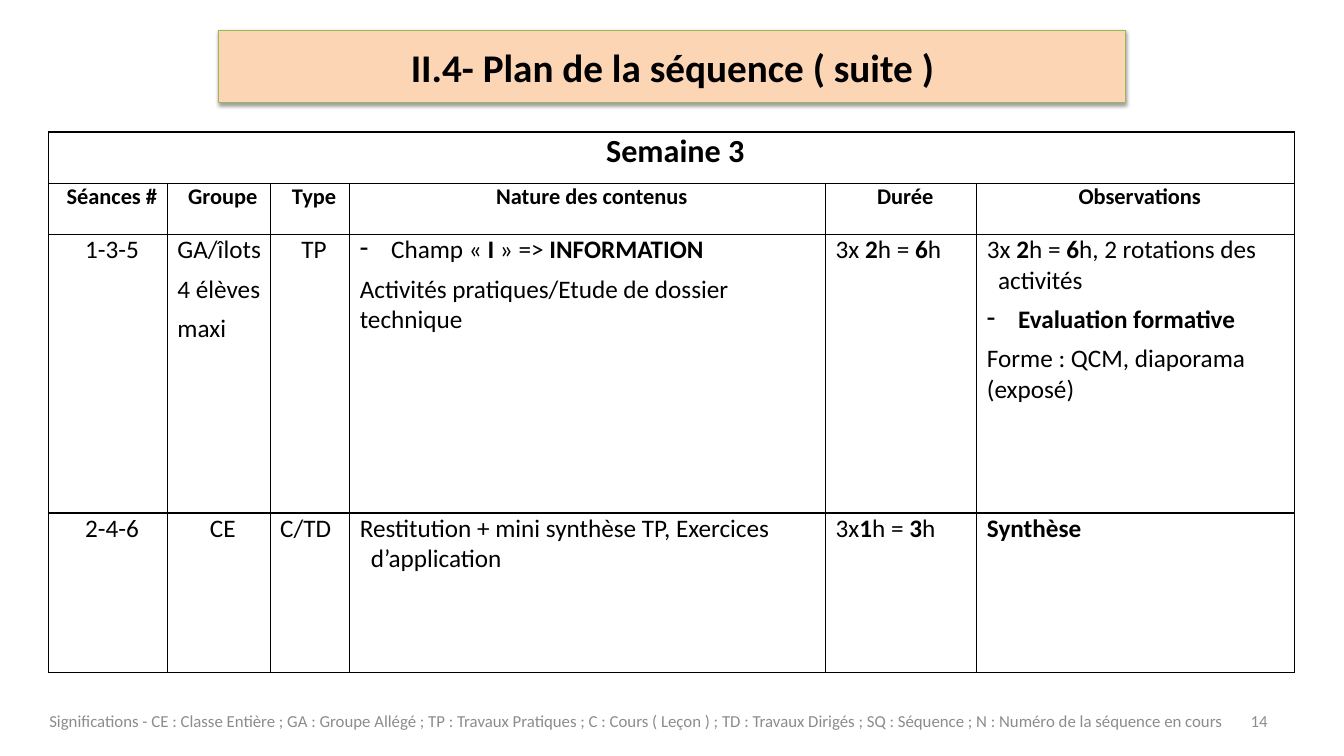
import pptx
import pptx.util
import pptx.dml.color
import pptx.enum.text
import pptx.oxml
import pptx.oxml.ns

TITLE = "II.4- Plan de la séquence ( suite )"
WEEK = "Semaine 3"
HEADS = ["Séances #", "Groupe", "Type", "Nature des contenus", "Durée", "Observations"]
BODY = [
    [
        [("mid", "1-3-5")],
        [("left", "GA/îlots"), ("left", "4 élèves"), ("left", "maxi")],
        [("mid", "TP")],
        [("dash", "Champ «\u00a0*I*\u00a0» => *INFORMATION*"),
         ("flat", "Activités pratiques/Etude de dossier technique")],
        [("left", "3x *2*h = *6*h")],
        [("left", "3x *2*h = *6*h, 2 rotations des activités"),
         ("dash", "*Evaluation formative*"),
         ("flat", "Forme : QCM, diaporama (exposé)")],
    ],
    [
        [("mid", "2-4-6")],
        [("mid", "CE")],
        [("left", "C/TD")],
        [("left", "Restitution + mini synthèse TP, Exercices d’application")],
        [("left", "3x*1*h = *3*h")],
        [("left", "*Synthèse*")],
    ],
]
NOTE = ("Significations - CE : Classe Entière ; GA : Groupe Allégé ; TP : Travaux Pratiques ; "
        "C : Cours ( Leçon ) ; TD : Travaux Dirigés ; SQ : Séquence ; "
        "N : Numéro de la séquence en cours")
PAGE = "14"

HUES = {"ink": "000000", "peach": "FCD5B5", "green": "98B955", "grey": "8C8C8C"}
FONT = "Calibri"
WIDE, HIGH = 13.33, 7.5
COLS = [1.18, 1.02, 0.79, 4.72, 1.5, 3.15]
ROWS = [0.51, 0.51, 2.76, 1.58]
AREAS = {
    "title": (16.28, 4, 67.5, 9.6),
    "table": (3.6, 17.47, 92.72, 71.4),
    "note": (2.78, 92.67, 89.2, 5.33),
    "page": (71.72, 92.67, 23.33, 5.33),
}
ALIGN = pptx.enum.text.PP_ALIGN
FORMS = {
    "mid": (ALIGN.CENTER, 0.19, -0.11, False),
    "left": (ALIGN.LEFT, 0.19, -0.11, False),
    "dash": (ALIGN.LEFT, 0.39, -0.31, True),
    "flat": (ALIGN.LEFT, 0.08, 0, False),
}
INCH, PT = pptx.util.Inches, pptx.util.Pt
NS = pptx.oxml.ns.nsdecls("a")


def tint(key):
    return pptx.dml.color.RGBColor.from_string(HUES[key])


def place(name):
    x, y, w, h = AREAS[name]
    return [INCH(share * side / 100) for share, side in ((x, WIDE), (y, HIGH), (w, WIDE), (h, HIGH))]


def write(par, text, size=18, bold=False, hue="ink", align=ALIGN.CENTER, form=None):
    par.alignment = align
    if form:
        par.alignment, left, hang, dash = FORMS[form]
        par.space_before = PT(6)
        props = par._p.get_or_add_pPr()
        props.set("marL", str(INCH(left)))
        props.set("indent", str(INCH(hang)))
        tag = f'<a:buChar {NS} char="-"/>' if dash else f"<a:buNone {NS}/>"
        props.append(pptx.oxml.parse_xml(tag))
    for n, part in enumerate(text.split("*")):
        if part:
            run = par.add_run()
            run.text = part
            run.font.name, run.font.size = FONT, PT(size)
            run.font.bold = bold or n % 2 == 1
            run.font.color.rgb = tint(hue)


def fill(cell, pars, size=18, bold=False):
    cell.margin_left = cell.margin_right = INCH(0.02)
    cell.margin_top = cell.margin_bottom = 0
    cell.fill.background()
    props = cell._tc.get_or_add_tcPr()
    for n, side in enumerate("LRTB"):
        props.insert(n, pptx.oxml.parse_xml(
            f'<a:ln{side} {NS} w="{PT(1)}"><a:solidFill><a:srgbClr val="{HUES["ink"]}"/>'
            f"</a:solidFill></a:ln{side}>"))
    frame = cell.text_frame
    for n, (form, text) in enumerate(pars):
        par = frame.add_paragraph() if n else frame.paragraphs[0]
        write(par, text, size=size, bold=bold, form=form)


def head(slide):
    box = slide.shapes.title
    box.left, box.top, box.width, box.height = place("title")
    box.fill.solid()
    box.fill.fore_color.rgb = tint("peach")
    box.line.color.rgb = tint("green")
    box.line.width = PT(0.75)
    box._element.spPr.append(pptx.oxml.parse_xml(
        f'<a:effectLst {NS}><a:outerShdw blurRad="{PT(3.1)}" dist="{PT(1.6)}" dir="5400000" '
        f'rotWithShape="0"><a:srgbClr val="{HUES["ink"]}"><a:alpha val="38000"/></a:srgbClr>'
        "</a:outerShdw></a:effectLst>"))
    frame = box.text_frame
    frame.auto_size = pptx.enum.text.MSO_AUTO_SIZE.NONE
    frame.vertical_anchor = pptx.enum.text.MSO_ANCHOR.MIDDLE
    write(frame.paragraphs[0], TITLE, size=28, bold=True)


def plan(slide):
    grid = slide.shapes.add_table(len(ROWS), len(COLS), *place("table")).table
    grid.first_row = grid.horz_banding = False
    for col, w in zip(grid.columns, COLS):
        col.width = INCH(w)
    for row, h in zip(grid.rows, ROWS):
        row.height = INCH(h)
    grid.cell(0, 0).merge(grid.cell(0, len(COLS) - 1))
    for c, label in enumerate(HEADS):
        fill(grid.cell(0, c), [] if c else [("mid", WEEK)], size=23, bold=True)
        fill(grid.cell(1, c), [("mid", label)], size=16, bold=True)
        for r, line in enumerate(BODY, 2):
            fill(grid.cell(r, c), line[c])


def foot(slide, name, text, align):
    frame = slide.shapes.add_textbox(*place(name)).text_frame
    frame.word_wrap = True
    frame.vertical_anchor = pptx.enum.text.MSO_ANCHOR.MIDDLE
    write(frame.paragraphs[0], text, size=12, hue="grey", align=align)


def main():
    deck = pptx.Presentation()
    deck.slide_width, deck.slide_height = INCH(WIDE), INCH(HIGH)
    slide = deck.slides.add_slide(deck.slide_layouts[5])
    head(slide)
    plan(slide)
    foot(slide, "note", NOTE, ALIGN.CENTER)
    foot(slide, "page", PAGE, ALIGN.RIGHT)
    deck.save("out.pptx")


if __name__ == "__main__":
    main()
